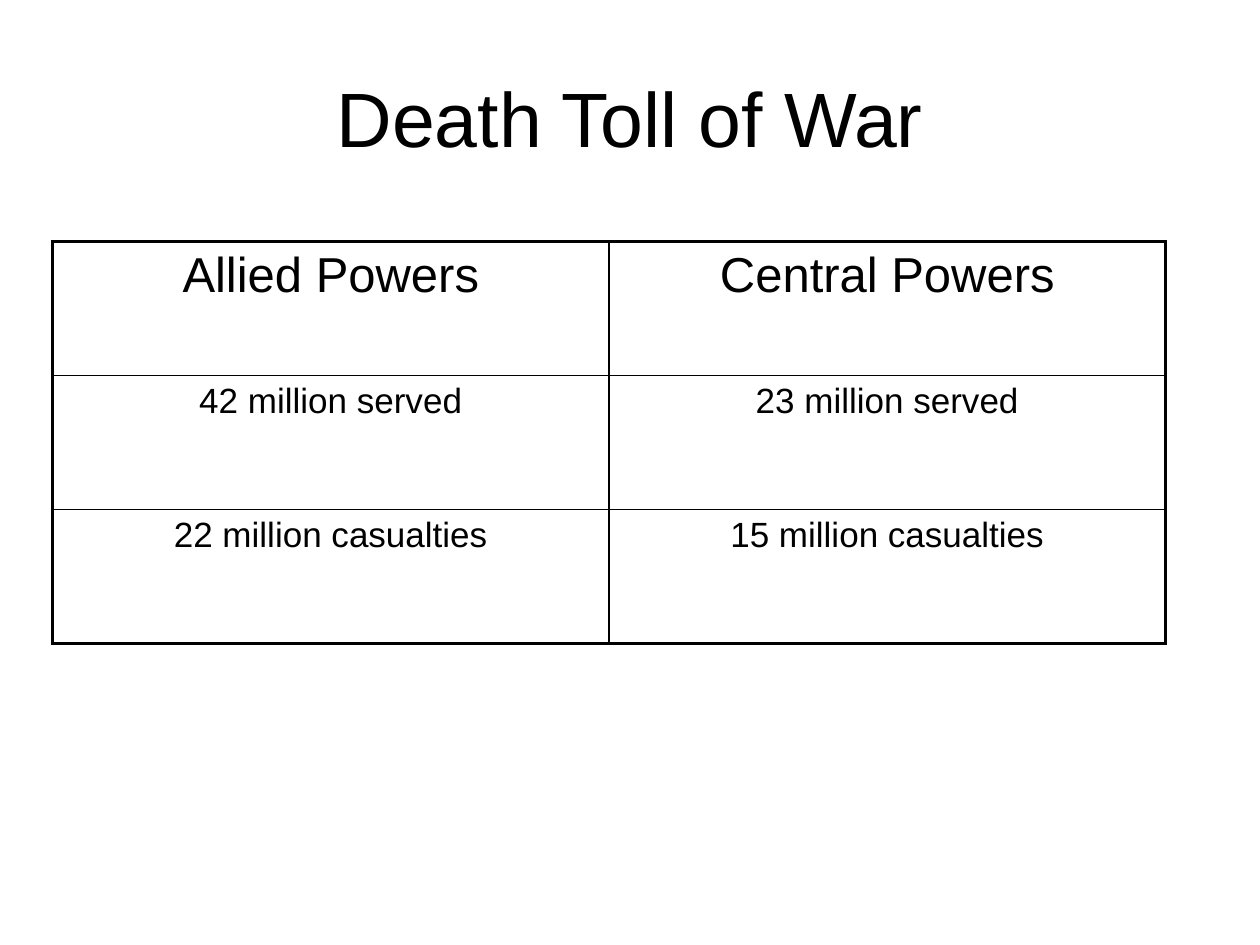
from dataclasses import dataclass

from pptx import Presentation as Deck
from pptx.dml.color import RGBColor as Color
from pptx.enum.text import MSO_ANCHOR as Anchor, PP_ALIGN as Align
from pptx.oxml.ns import qn
from pptx.util import Pt
from lxml.etree import SubElement as Sub

COLORS = {"ink": "000000", "paper": "FFFFFF"}
THICK, THIN = 2.25, 1
WIDTH = 318
HEIGHTS = (76.5, 76.75, 76.5)


@dataclass
class Row:
    size: int
    texts: tuple[str, str]


ROWS = [
    Row(28, ("Allied Powers", "Central Powers")),
    Row(20, ("42 million served", "23 million served")),
    Row(20, ("22 million casualties", "15 million casualties")),
]


def write(frame, text: str, size: int) -> None:
    para = frame.paragraphs[0]
    para.alignment = Align.CENTER
    run = para.add_run()
    run.text = text
    for key, value in {"name": "Arial", "size": Pt(size), "bold": False}.items():
        setattr(run.font, key, value)
    run.font.color.rgb = Color.from_string(COLORS["ink"])


def edge(cell, side: str, width: float) -> None:
    """Draw one border; side is L, R, T or B."""
    props = cell._tc.get_or_add_tcPr()
    line = Sub(props, qn(f"a:ln{side}"), w=str(Pt(width)))
    fill = Sub(line, qn("a:solidFill"))
    Sub(fill, qn("a:srgbClr"), val=COLORS["ink"])


def title(slide, text: str) -> None:
    box = slide.shapes.add_textbox(Pt(36), Pt(21.6), Pt(648), Pt(90))
    frame = box.text_frame
    for key, value in {"word_wrap": True, "vertical_anchor": Anchor.MIDDLE}.items():
        setattr(frame, key, value)
    write(frame, text, 44)


def grid(slide, rows: list[Row]) -> None:
    """Draw the table with a thick frame and thin inner lines."""
    count = len(rows[0].texts)
    table = slide.shapes.add_table(
        len(rows), count, Pt(30), Pt(138), Pt(WIDTH * count), Pt(sum(HEIGHTS))
    ).table
    for key in ("first_row", "horz_banding"):
        setattr(table, key, False)
    for col in table.columns:
        col.width = Pt(WIDTH)
    for y, row in enumerate(rows):
        table.rows[y].height = Pt(HEIGHTS[y])
        for x, text in enumerate(row.texts):
            cell = table.cell(y, x)
            write(cell.text_frame, text, row.size)
            outer = {
                "L": x == 0,
                "R": x == count - 1,
                "T": y == 0,
                "B": y == len(rows) - 1,
            }
            for side, thick in outer.items():
                edge(cell, side, THICK if thick else THIN)
            cell.fill.solid()
            cell.fill.fore_color.rgb = Color.from_string(COLORS["paper"])


def main() -> None:
    deck = Deck()
    deck.slide_width, deck.slide_height = Pt(720), Pt(540)
    slide = deck.slides.add_slide(deck.slide_layouts[6])
    title(slide, "Death Toll of War")
    grid(slide, ROWS)
    deck.save("out.pptx")


if __name__ == "__main__":
    main()
